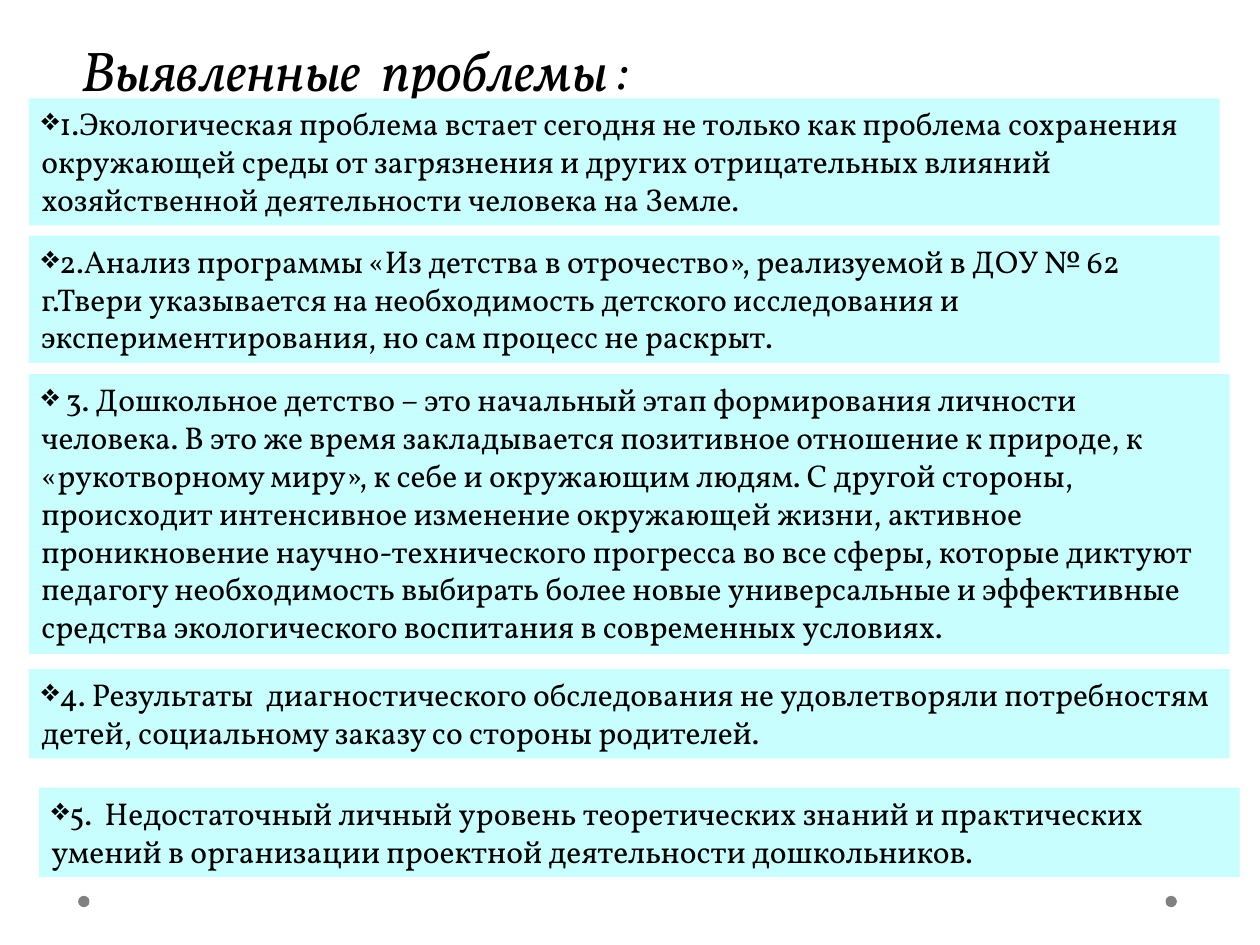
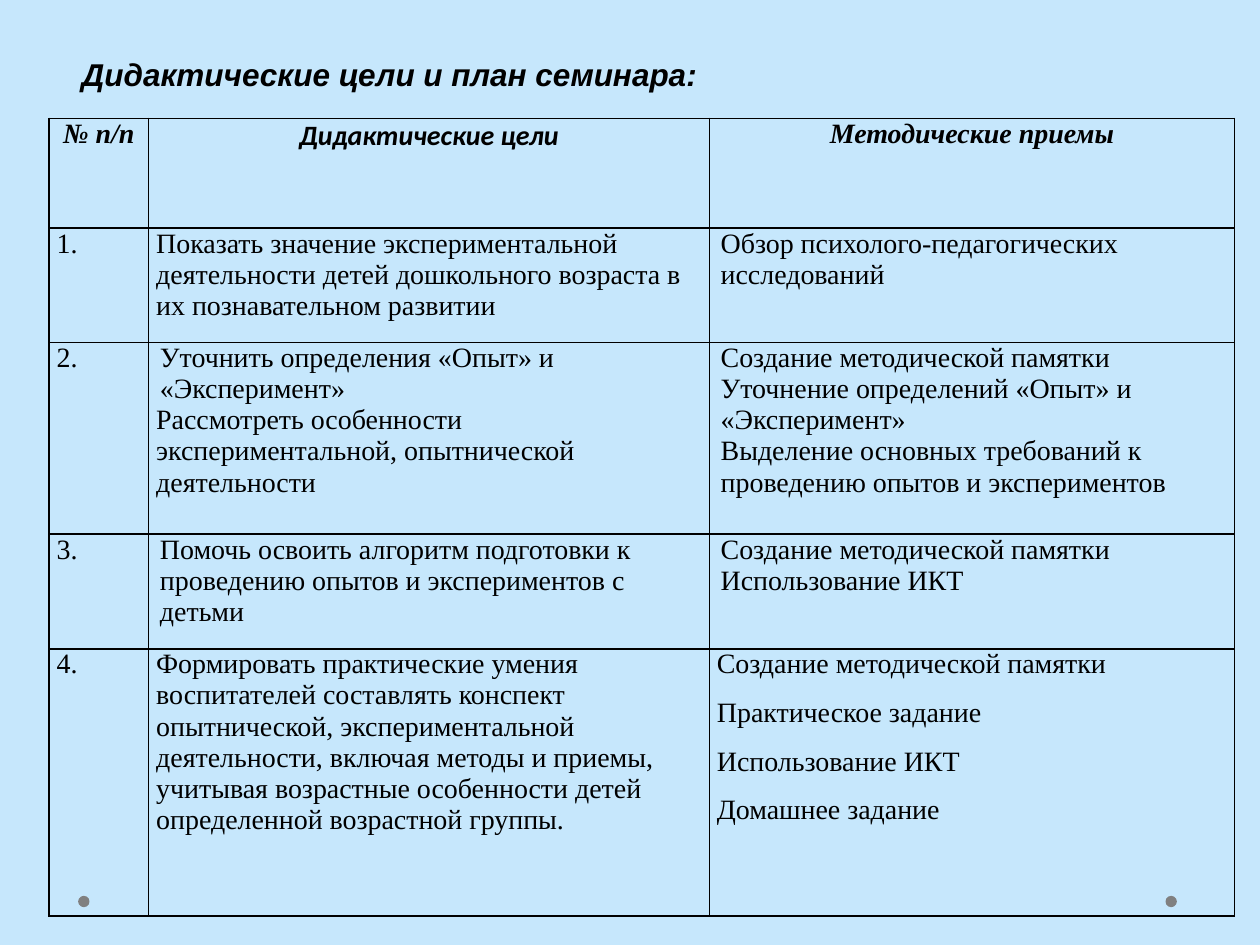
from dataclasses import dataclass

import pptx
import pptx.dml.color
import pptx.enum.shapes
import pptx.enum.text
import pptx.oxml
import pptx.oxml.ns
import pptx.util
from pptx.util import Inches

RGBColor = pptx.dml.color.RGBColor
ALIGN = pptx.enum.text.PP_ALIGN
ANCHOR = pptx.enum.text.MSO_ANCHOR
SHAPE = pptx.enum.shapes.MSO_SHAPE

BLACK = RGBColor(0x00, 0x00, 0x00)
WHITE = RGBColor(0xFF, 0xFF, 0xFF)
GREY = RGBColor(0x80, 0x80, 0x80)
AQUA = RGBColor(0xC8, 0xFE, 0xFD)
SKY = RGBColor(0xC6, 0xE7, 0xFC)

SERIF = "Vollkorn"
TIMES = "Times New Roman"


@dataclass(frozen=True)
class Band:
    left: float
    top: float
    width: float
    height: float
    text: str


@dataclass(frozen=True)
class Para:
    text: str
    after: int = 10
    indent: float = 0
    font: str = TIMES


def indented(*texts: str) -> list[Para]:
    return [Para(text, after=0, indent=0.03) for text in texts]


def spaced(*texts: str) -> list[Para]:
    return [Para(text) for text in texts]


PROBLEMS = [
    Band(0.23, 0.78, 9.45, 1.01,
         "1.Экологическая проблема встает сегодня не только как проблема сохранения "
         "окружающей среды от загрязнения и других отрицательных влияний "
         "хозяйственной деятельности человека на Земле."),
    Band(0.23, 1.87, 9.45, 1.01,
         "2.Анализ программы «Из детства в отрочество», реализуемой в ДОУ № 62 "
         "г.Твери указывается на необходимость детского исследования и "
         "экспериментирования, но сам процесс не раскрыт."),
    Band(0.23, 2.97, 9.53, 2.22,
         " 3. Дошкольное детство – это начальный этап формирования личности "
         "человека. В это же время закладывается позитивное отношение к природе, к "
         "«рукотворному миру», к себе и окружающим людям. С другой стороны, "
         "происходит интенсивное изменение окружающей жизни, активное "
         "проникновение научно-технического прогресса во все сферы, которые диктуют "
         "педагогу необходимость выбирать более новые универсальные и эффективные "
         "средства экологического воспитания в современных условиях."),
    Band(0.23, 5.31, 9.53, 0.71,
         "4. Результаты  диагностического обследования не удовлетворяли "
         "потребностям детей, социальному заказу со стороны родителей."),
    Band(0.31, 6.25, 9.53, 0.71,
         "5.  Недостаточный личный уровень теоретических знаний и практических "
         "умений в организации проектной деятельности дошкольников."),
]

COLUMN_WIDTHS = [0.79, 4.45, 4.17]
ROW_HEIGHTS = [0.87, 0.91, 1.52, 0.91, 2.12]
SEMINAR_PLAN = [
    [spaced("№ п/п"),
     [Para("Дидактические цели", after=0, font="Calibri")],
     spaced("Методические приемы")],
    [spaced("1."),
     spaced("Показать значение экспериментальной деятельности детей дошкольного "
            "возраста в их познавательном развитии"),
     indented("Обзор психолого-педагогических исследований")],
    [spaced("2."),
     indented("Уточнить определения «Опыт» и «Эксперимент»")
     + spaced("Рассмотреть особенности экспериментальной, опытнической деятельности"),
     indented("Создание методической памятки",
              "Уточнение определений «Опыт» и «Эксперимент»",
              "Выделение основных требований к проведению опытов и экспериментов")],
    [spaced("3."),
     indented("Помочь освоить алгоритм подготовки к проведению опытов и "
              "экспериментов с детьми"),
     indented("Создание методической памятки", "Использование ИКТ")],
    [spaced("4."),
     spaced("Формировать практические умения воспитателей составлять конспект "
            "опытнической, экспериментальной деятельности, включая методы и приемы, "
            "учитывая возрастные особенности детей определенной возрастной группы."),
     spaced("Создание методической памятки", "Практическое задание",
            "Использование ИКТ", "Домашнее задание")],
]


def style(p, font: str, size: int, bold: bool = False, italic: bool = False) -> None:
    p.font.name = font
    p.font.size = pptx.util.Pt(size)
    p.font.bold = bold
    p.font.italic = italic
    p.font.color.rgb = BLACK


def add_block(s, kind, left: float, top: float, width: float, height: float,
              color: RGBColor):
    sp = s.shapes.add_shape(kind, Inches(left), Inches(top), Inches(width), Inches(height))
    sp.shadow.inherit = False
    sp.fill.solid()
    sp.fill.fore_color.rgb = color
    sp.line.fill.background()
    return sp


def add_slide(prs, background: RGBColor):
    s = prs.slides.add_slide(prs.slide_layouts[6])
    s.background.fill.solid()
    s.background.fill.fore_color.rgb = background
    for left in (9.25, 0.62):
        add_block(s, SHAPE.OVAL, left, 7.11, 0.09, 0.09, GREY)
    return s


def add_title(s, text: str, top: float, width: float, height: float,
              font: str, size: int, bold: bool):
    sp = s.shapes.add_textbox(Inches(0.55), Inches(top), Inches(width), Inches(height))
    p = sp.text_frame.paragraphs[0]
    p.text = text
    style(p, font, size, bold, italic=True)
    return sp.text_frame


def add_band(s, band: Band) -> None:
    sp = add_block(s, SHAPE.RECTANGLE, band.left, band.top, band.width, band.height, AQUA)
    tf = sp.text_frame
    tf.word_wrap = True
    tf.vertical_anchor = ANCHOR.TOP
    p = tf.paragraphs[0]
    p.text = band.text
    p.alignment = ALIGN.LEFT
    style(p, SERIF, 18)
    bullet = pptx.oxml.parse_xml(f'<a:buChar {pptx.oxml.ns.nsdecls("a")} char="❖"/>')
    p._p.get_or_add_pPr().insert_element_before(bullet, "a:tabLst", "a:defRPr", "a:extLst")


def add_borders(cell) -> None:
    for side in "LRTB":
        cell._tc.get_or_add_tcPr().append(pptx.oxml.parse_xml(
            f'<a:ln{side} {pptx.oxml.ns.nsdecls("a")} w="12700"><a:solidFill>'
            f'<a:srgbClr val="{BLACK}"/></a:solidFill></a:ln{side}>'))


def fill_cell(cell, paras: list[Para], header: bool) -> None:
    cell.margin_left = cell.margin_right = Inches(0.06)
    cell.margin_top = cell.margin_bottom = 0
    add_borders(cell)
    cell.fill.background()
    tf = cell.text_frame
    for i, para in enumerate(paras):
        p = tf.add_paragraph() if i else tf.paragraphs[0]
        p.text = para.text
        p.alignment = ALIGN.CENTER if header else ALIGN.LEFT
        p.space_after = pptx.util.Pt(para.after)
        p._p.get_or_add_pPr().set("marL", str(Inches(para.indent)))
        style(p, para.font, 16, bold=header, italic=header)


def add_plan_table(s) -> None:
    frame = s.shapes.add_table(len(ROW_HEIGHTS), len(COLUMN_WIDTHS), Inches(0.39),
                               Inches(0.94), Inches(sum(COLUMN_WIDTHS)),
                               Inches(sum(ROW_HEIGHTS)))
    table = frame.table
    table.first_row = table.horz_banding = False
    for column, width in zip(table.columns, COLUMN_WIDTHS):
        column.width = Inches(width)
    for i, (row, height) in enumerate(zip(table.rows, ROW_HEIGHTS)):
        row.height = Inches(height)
        for cell, paras in zip(row.cells, SEMINAR_PLAN[i]):
            fill_cell(cell, paras, header=i == 0)


def build_problems(prs) -> None:
    s = add_slide(prs, WHITE)
    add_title(s, "Выявленные  проблемы :", 0.23, 7.04, 0.94, SERIF, 32, False).word_wrap = True
    for band in PROBLEMS:
        add_band(s, band)


def build_seminar(prs) -> None:
    s = add_slide(prs, SKY)
    add_plan_table(s)
    tf = add_title(s, "Дидактические цели и план семинара:", 0.39, 5.14, 0.35,
                   "Arial", 18, True)
    tf.word_wrap = False
    tf.margin_bottom = 0
    tf.vertical_anchor = ANCHOR.MIDDLE
    tf.paragraphs[0].alignment = ALIGN.JUSTIFY


def main() -> None:
    prs = pptx.Presentation()
    prs.slide_width = Inches(10)
    prs.slide_height = Inches(7.5)
    build_problems(prs)
    build_seminar(prs)
    prs.save("out.pptx")


if __name__ == "__main__":
    main()
